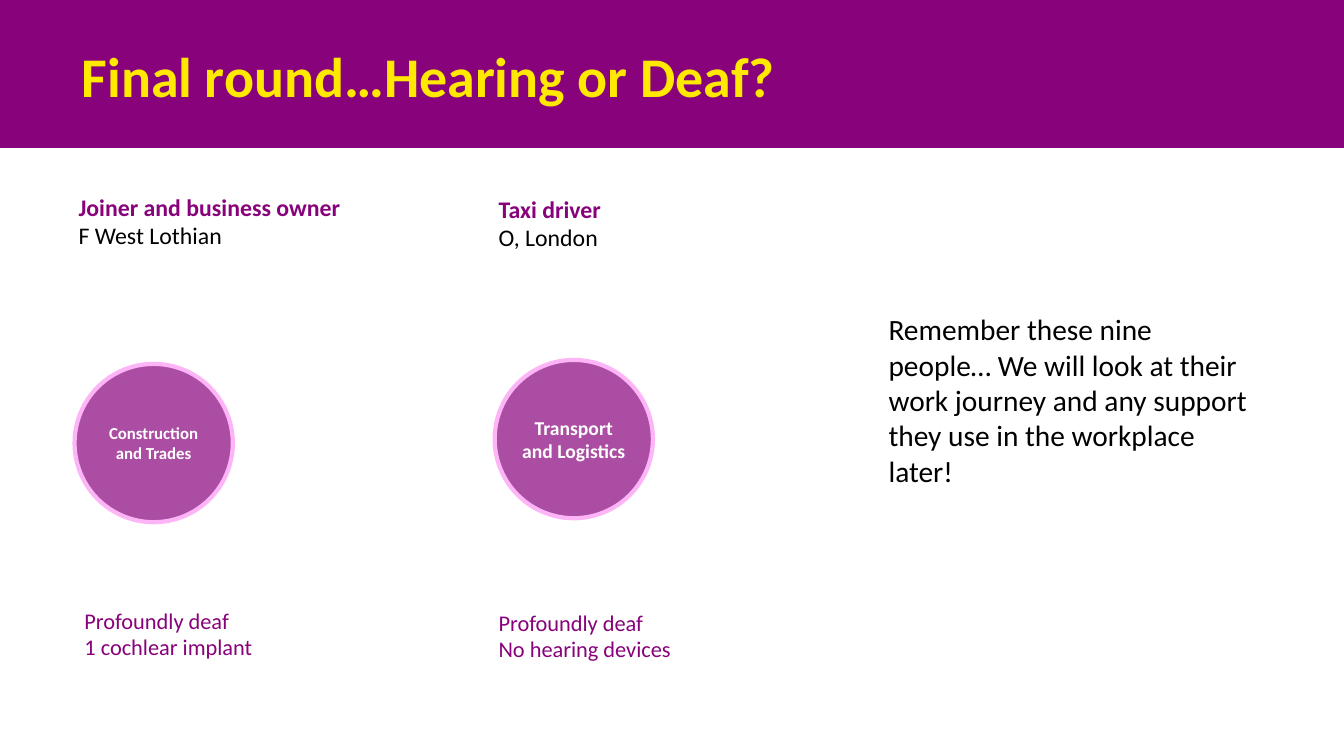
from dataclasses import dataclass

from pptx import Presentation
from pptx.dml.color import RGBColor
from pptx.enum.shapes import MSO_SHAPE
from pptx.enum.text import MSO_ANCHOR, PP_ALIGN
from pptx.slide import Slide
from pptx.text.text import TextFrame, _Paragraph
from pptx.util import Cm, Pt

PURPLE = RGBColor(0x87, 0x02, 0x7B)
MAUVE = RGBColor(0xAB, 0x4E, 0xA3)
PINK = RGBColor(0xFE, 0xB5, 0xF7)
YELLOW = RGBColor(0xFF, 0xE9, 0x00)
BLACK = RGBColor(0, 0, 0)
WHITE = RGBColor(0xFF, 0xFF, 0xFF)

FONT = "Calibri"
WIDE = (0.33, 0.18)
SLIM = (0.25, 0.13)
DISC = 3.99


@dataclass
class Label:
    """Text box; lengths in cm, pad is side and top margin."""
    left: float
    top: float
    width: float
    height: float
    text: str
    size: int
    color: RGBColor
    pad: tuple[float, float] = SLIM


@dataclass
class Person:
    """One worker: heading, sector disc and hearing status."""
    head: Label
    disc: tuple[float, float]
    sector: str
    size: int
    status: Label


def style(para: _Paragraph, size: int, color: RGBColor, bold: bool = False) -> None:
    for run in para.runs:
        run.font.name = FONT
        run.font.size = Pt(size)
        run.font.bold = bold
        run.font.color.rgb = color


def pad_frame(frame: TextFrame, side: float, top: float) -> None:
    frame.word_wrap = True
    frame.margin_left = frame.margin_right = Cm(side)
    frame.margin_top = frame.margin_bottom = Cm(top)


def add_label(slide: Slide, label: Label) -> TextFrame:
    box = slide.shapes.add_textbox(
        Cm(label.left), Cm(label.top), Cm(label.width), Cm(label.height))
    frame = box.text_frame
    pad_frame(frame, *label.pad)
    frame.text = label.text
    for para in frame.paragraphs:
        style(para, label.size, label.color)
    return frame


def add_person(slide: Slide, person: Person) -> None:
    # Job in bold purple, name and place below
    frame = add_label(slide, person.head)
    style(frame.paragraphs[0], person.head.size, PURPLE, True)

    # Sector disc
    left, top = person.disc
    disc = slide.shapes.add_shape(
        MSO_SHAPE.OVAL, Cm(left), Cm(top), Cm(DISC), Cm(DISC))
    disc.shadow.inherit = False
    disc.fill.solid()
    disc.fill.fore_color.rgb = MAUVE
    disc.line.color.rgb = PINK
    disc.line.width = Pt(3)
    frame = disc.text_frame
    pad_frame(frame, 0, 0)
    frame.vertical_anchor = MSO_ANCHOR.MIDDLE
    frame.text = person.sector
    para = frame.paragraphs[0]
    para.alignment = PP_ALIGN.CENTER
    style(para, person.size, WHITE, True)

    # Hearing status
    add_label(slide, person.status)


TITLE = Label(1.73, 0.89, 22.94, 2.01, "Final round…Hearing or Deaf?", 40, YELLOW, WIDE)
NOTE = Label(
    22.15, 7.72, 9.78, 4.75,
    "Remember these nine people… We will look at their work journey "
    "and any support they use in the workplace later!", 21, BLACK)
PEOPLE = [
    Person(
        Label(1.73, 4.72, 10.74, 2.44,
              "Joiner and business owner\nF West Lothian", 17, BLACK),
        (1.88, 9.17), "Construction and Trades", 12,
        Label(1.88, 15.16, 6.88, 1.63,
              "Profoundly deaf\n1 cochlear implant", 16, PURPLE)),
    Person(
        Label(12.24, 4.72, 10.03, 2.01, "Taxi driver\nO, London", 17, BLACK, WIDE),
        (12.47, 9.07), "Transport and Logistics", 14,
        Label(12.24, 15.16, 7.01, 2.01,
              "Profoundly deaf\nNo hearing devices", 16, PURPLE, WIDE)),
]


def main() -> None:
    deck = Presentation()
    deck.slide_width = Cm(33.88)
    deck.slide_height = Cm(19.05)
    slide = deck.slides.add_slide(deck.slide_layouts[6])

    # Title band
    band = slide.shapes.add_shape(
        MSO_SHAPE.RECTANGLE, 0, 0, deck.slide_width, Cm(3.73))
    band.shadow.inherit = False
    band.fill.solid()
    band.fill.fore_color.rgb = PURPLE
    band.line.fill.background()
    frame = add_label(slide, TITLE)
    frame.vertical_anchor = MSO_ANCHOR.MIDDLE
    style(frame.paragraphs[0], TITLE.size, TITLE.color, True)

    # People and closing note
    for person in PEOPLE:
        add_person(slide, person)
    add_label(slide, NOTE)

    deck.save("out.pptx")


if __name__ == "__main__":
    main()
